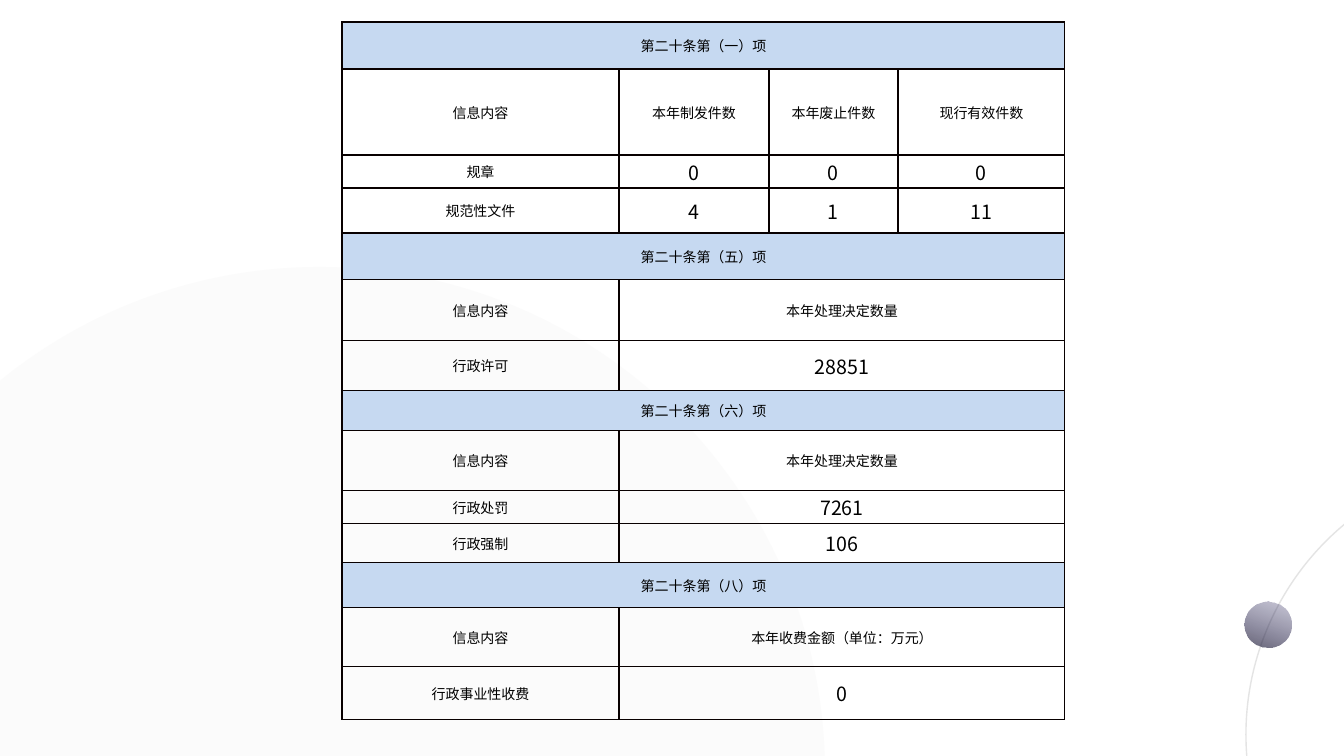
from dataclasses import dataclass
from lxml.etree import SubElement
from pptx import Presentation
from pptx.dml.color import RGBColor
from pptx.enum.shapes import MSO_SHAPE
from pptx.enum.text import MSO_ANCHOR, PP_ALIGN
from pptx.oxml import parse_xml
from pptx.oxml.ns import nsdecls, qn
from pptx.util import Emu, Pt

EMU_PER_PX = 914400 / 100.8


def px(n):
    return Emu(round(n * EMU_PER_PX))


@dataclass(frozen=True)
class Theme:
    text: str = "000000"
    border: str = "080000"
    band: str = "C6D9F1"
    ring: str = "A6A6A6"
    disc: str = "F2F2F2"
    ball_top: str = "2E2961"
    ball_bottom: str = "120F2D"
    label_font: str = "Times New Roman"
    number_font: str = "Noto Sans CJK SC"
    label_size: int = 10
    number_size: int = 14
    line_width: int = 1


class SlideBuilder:
    def __init__(self, prs, theme):
        self.theme = theme
        self.slide = prs.slides.add_slide(prs.slide_layouts[6])

    def set_opacity(self, sp, *opacities):
        clrs = list(sp._element.spPr.iter(qn("a:srgbClr")))
        for clr, opacity in zip(clrs, opacities):
            SubElement(clr, qn("a:alpha"), val=str(opacity * 1000))

    def circle(self, x, y, size):
        sp = self.slide.shapes.add_shape(
            MSO_SHAPE.OVAL, px(x), px(y), px(size), px(size))
        sp.shadow.inherit = False
        sp.fill.background()
        sp.line.fill.background()
        return sp

    def ring(self, x, y, size, opacity):
        sp = self.circle(x, y, size)
        sp.line.width = Pt(self.theme.line_width)
        sp.line.color.rgb = RGBColor.from_string(self.theme.ring)
        self.set_opacity(sp, opacity)

    def disc(self, x, y, size, opacity):
        sp = self.circle(x, y, size)
        sp.fill.solid()
        sp.fill.fore_color.rgb = RGBColor.from_string(self.theme.disc)
        self.set_opacity(sp, opacity)

    def ball(self, x, y, size, opacities):
        sp = self.circle(x, y, size)
        sp.fill.gradient()
        sp.fill.gradient_angle = 250
        colors = (self.theme.ball_top, self.theme.ball_bottom)
        for i, (stop, value) in enumerate(zip(sp.fill.gradient_stops, colors)):
            stop.color.rgb = RGBColor.from_string(value)
            stop.position = i
        self.set_opacity(sp, *opacities)

    def style_cell(self, cell, band):
        cell.margin_left = cell.margin_right = px(7)
        cell.margin_top = cell.margin_bottom = 0
        cell.vertical_anchor = MSO_ANCHOR.MIDDLE
        if band:
            cell.fill.solid()
            cell.fill.fore_color.rgb = RGBColor.from_string(self.theme.band)
        else:
            cell.fill.background()
        tcPr = cell._tc.get_or_add_tcPr()
        for i, side in enumerate("LRTB"):
            tcPr.insert(i, parse_xml(
                f'<a:ln{side} {nsdecls("a")} w="{Pt(self.theme.line_width)}">'
                f'<a:solidFill><a:srgbClr val="{self.theme.border}"/></a:solidFill>'
                f'</a:ln{side}>'))

    def cell_text(self, cell, text):
        th = self.theme
        number = text.isdigit()
        p = cell.text_frame.paragraphs[0]
        p.alignment = PP_ALIGN.CENTER
        r = p.add_run()
        r.text = text
        r.font.size = Pt(th.number_size if number else th.label_size)
        r.font.name = th.number_font if number else th.label_font
        r.font.color.rgb = RGBColor.from_string(th.text)
        SubElement(r._r.get_or_add_rPr(), qn("a:ea"), typeface=th.number_font)

    def table(self, x, y, widths, heights, rows):
        tbl = self.slide.shapes.add_table(
            len(rows), len(widths), px(x), px(y),
            px(sum(widths)), px(sum(heights))).table
        tbl.first_row = tbl.horz_banding = False
        for column, width in zip(tbl.columns, widths):
            column.width = px(width)
        last = len(widths) - 1
        for i, (height, texts) in enumerate(zip(heights, rows)):
            tbl.rows[i].height = px(height)
            for cell in tbl.rows[i].cells:
                self.style_cell(cell, band=len(texts) == 1)
            if len(texts) <= last:
                tbl.cell(i, len(texts) - 1).merge(tbl.cell(i, last))
            for j, text in enumerate(texts):
                self.cell_text(tbl.cell(i, j), text)


COLUMN_WIDTHS = (277, 150, 129, 167)
ROW_HEIGHTS = (47, 86, 33, 45, 47, 61, 50, 40, 60, 33, 39, 45, 59, 53)
ROWS = (
    ("第二十条第（一）项",),
    ("信息内容", "本年制发件数", "本年废止件数", "现行有效件数"),
    ("规章", "0", "0", "0"),
    ("规范性文件", "4", "1", "11"),
    ("第二十条第（五）项",),
    ("信息内容", "本年处理决定数量"),
    ("行政许可", "28851"),
    ("第二十条第（六）项",),
    ("信息内容", "本年处理决定数量"),
    ("行政处罚", "7261"),
    ("行政强制", "106"),
    ("第二十条第（八）项",),
    ("信息内容", "本年收费金额（单位：万元）"),
    ("行政事业性收费", "0"),
)


def main():
    prs = Presentation()
    prs.slide_width, prs.slide_height = px(1344), px(756)
    s = SlideBuilder(prs, Theme())
    s.ring(1246, 461, 547, opacity=30)
    s.ball(1245, 602, 46, opacities=(26, 65))
    s.disc(-186, 267, 1011, opacity=29)
    s.table(342, 22, COLUMN_WIDTHS, ROW_HEIGHTS, ROWS)
    prs.save("out.pptx")


if __name__ == "__main__":
    main()
